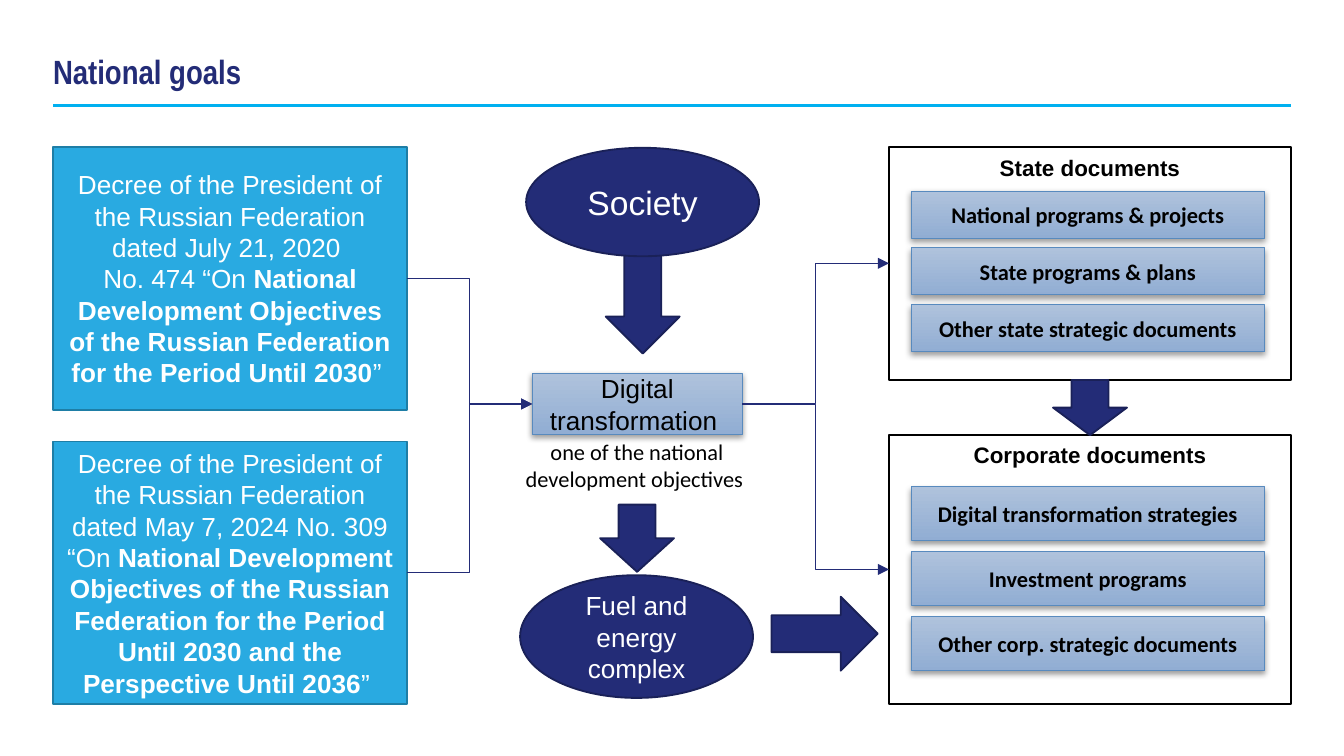
"""Build the National goals slide on a grid of 100 columns across the slide width."""
from lxml.etree import SubElement
from pptx import Presentation
from pptx.dml.color import RGBColor
from pptx.enum.shapes import MSO_CONNECTOR, MSO_SHAPE
from pptx.enum.text import MSO_ANCHOR, PP_ALIGN
from pptx.oxml import parse_xml
from pptx.oxml.ns import qn
from pptx.util import Inches, Pt

prs = Presentation()
prs.slide_width = Inches(10)
prs.slide_height = prs.slide_width * 9 // 16
s = prs.slides.add_slide(prs.slide_layouts[6])
col = prs.slide_width / 100
rgb = RGBColor.from_string

NS = 'xmlns:a="http://schemas.openxmlformats.org/drawingml/2006/main"'
SHADOW = (f'<a:outerShdw {NS} blurRad="40000" dist="20000" dir="5400000" rotWithShape="0">'
          '<a:srgbClr val="000000"><a:alpha val="38000"/></a:srgbClr></a:outerShdw>')
NAVY, WHITE, BLACK = "232C77", "FFFFFF", "000000"
DARK = {"fill": NAVY, "line": "1A2158"}
BLUE = {"fill": "29AAE1", "line": "1E7EA6"}
FRAME = {"fill": WHITE, "line": BLACK, "color": BLACK, "anchor": MSO_ANCHOR.TOP}
BAR = {"fill": ("AFC2DC", "91ADD3"), "line": "588ABE", "weight": 0.5, "color": BLACK,
       "margins": (1.1, 0.6, 1.1, 0.6)}
CAPTION = {"color": BLACK, "anchor": MSO_ANCHOR.TOP}
TITLE = {"color": NAVY, "anchor": MSO_ANCHOR.BOTTOM, "align": PP_ALIGN.LEFT,
         "margins": (0, 0.5, 1, 0.5), "spacing": 0.9}


def draw(shapes, kind, box, runs=(), font="Arial", size=14, fill=None, line=None, weight=1,
         color=WHITE, anchor=MSO_ANCHOR.MIDDLE, align=PP_ALIGN.CENTER,
         margins=(1, 0.5, 1, 0.5), spacing=None):
    box = [round(v * col) for v in box]
    sp = shapes.add_shape(kind, *box) if kind else shapes.add_textbox(*box)
    if kind:
        sp.line.color.rgb = rgb(line)
        sp.line.width = Pt(weight)
        sp.shadow.inherit = False
        if isinstance(fill, tuple):
            sp.fill.gradient()
            sp.fill.gradient_angle = 270
            for stop, shade in zip(sp.fill.gradient_stops, fill):
                stop.color.rgb = rgb(shade)
            sp._element.spPr.find(qn("a:effectLst")).append(parse_xml(SHADOW))
        else:
            sp.fill.solid()
            sp.fill.fore_color.rgb = rgb(fill)
    tf = sp.text_frame
    frame = {"word_wrap": True, "vertical_anchor": anchor}
    for side, margin in zip(("left", "top", "right", "bottom"), margins):
        frame[f"margin_{side}"] = round(margin * col)
    for name, value in frame.items():
        setattr(tf, name, value)
    p = tf.paragraphs[0]
    p.alignment, p.line_spacing = align, spacing
    for text, bold in runs:
        for i, part in enumerate(text.split("\n")):
            if i:
                p.add_line_break()
            r = p.add_run()
            r.text = part
            for name, value in {"name": font, "size": Pt(size), "bold": bold}.items():
                setattr(r.font, name, value)
            r.font.color.rgb = rgb(color)
    return sp


def connect(kind, ends, color, weight, arrow=False):
    c = s.shapes.add_connector(kind, *[round(v * col) for v in ends])
    c.line.color.rgb = rgb(color)
    c.line.width = Pt(weight)
    if arrow:
        SubElement(c.line._get_or_add_ln(), qn("a:tailEnd"), type="triangle")
    SubElement(c._element.spPr, qn("a:effectLst"))


connect(MSO_CONNECTOR.STRAIGHT, (3.95, 7.83, 96.05, 7.83), "00B0F0", 1.5)
draw(s.shapes, None, (3.95, 2.15, 71.3, 5.2), [("National goals", True)], "Arial Narrow", 18,
     **TITLE)

decrees = [
    (10.95, "dated July 21, 2020 \nNo. 474 “On ",
     "National Development Objectives of the Russian Federation for the Period Until 2030"),
    (32.85, "dated May 7, 2024 No. 309 “On ",
     "National Development Objectives of the Russian Federation for the Period Until 2030 "
     "and the Perspective Until 2036"),
]
for top, date, subject in decrees:
    runs = [("Decree of the President of the Russian Federation " + date, False),
            (subject, True), ("” ", False)]
    draw(s.shapes, MSO_SHAPE.RECTANGLE, (3.95, top, 26.35, 19.53), runs, **BLUE)

panels = [
    (10.95, 17.33, 14.23, 4.22, 3.5, "State documents",
     ["National programs & projects", "State programs & plans", "Other state strategic documents"]),
    (32.37, 20, 36.2, 4.85, 4, "Corporate documents",
     ["Digital transformation strategies", "Investment programs",
      "Other corp. strategic documents"]),
]
for top, height, first, pitch, bar, heading, items in panels:
    group = s.shapes.add_group_shape().shapes
    draw(group, MSO_SHAPE.RECTANGLE, (66.15, top, 29.9, height), [(heading, True)], size=12,
         **FRAME)
    for i, item in enumerate(items):
        draw(group, MSO_SHAPE.RECTANGLE, (67.8, first + i * pitch, 26.3, bar), [(item, True)],
             "Calibri", 12, **BAR)

arrows = [(43.87, 19.6, 7.9, 90), (44.9, 37.3, 5, 90), (57.4, 44.4, 7.9, 0),
          (79.05, 27.58, 4.1, 90)]
for left, top, length, turn in arrows:
    draw(s.shapes, MSO_SHAPE.RIGHT_ARROW, (left, top, length, 5.5), **DARK).rotation = turn

draw(s.shapes, MSO_SHAPE.RECTANGLE, (39.6, 27.78, 15.64, 4.56),
     [("Digital transformation ", False)], **BAR)
draw(s.shapes, None, (38, 32.1, 18.8, 5),
     [("one of the national development objectives ", False)], "Calibri", 12, **CAPTION)

ovals = [(39.15, 11, 8.07, "Society", 18), (38.7, 42.8, 9.13, "Fuel and energy complex", 14)]
for left, top, height, label, size in ovals:
    draw(s.shapes, MSO_SHAPE.OVAL, (left, top, 17.33, height), [(label, False)], size=size, **DARK)

hub = 30.06
for ends in [(30.3, 42.6, 39.6, hub), (30.3, 20.7, 39.6, hub),
             (55.24, hub, 66.15, 19.6), (55.24, hub, 66.15, 42.37)]:
    connect(MSO_CONNECTOR.ELBOW, ends, NAVY, 0.5, arrow=True)

prs.save("out.pptx")
